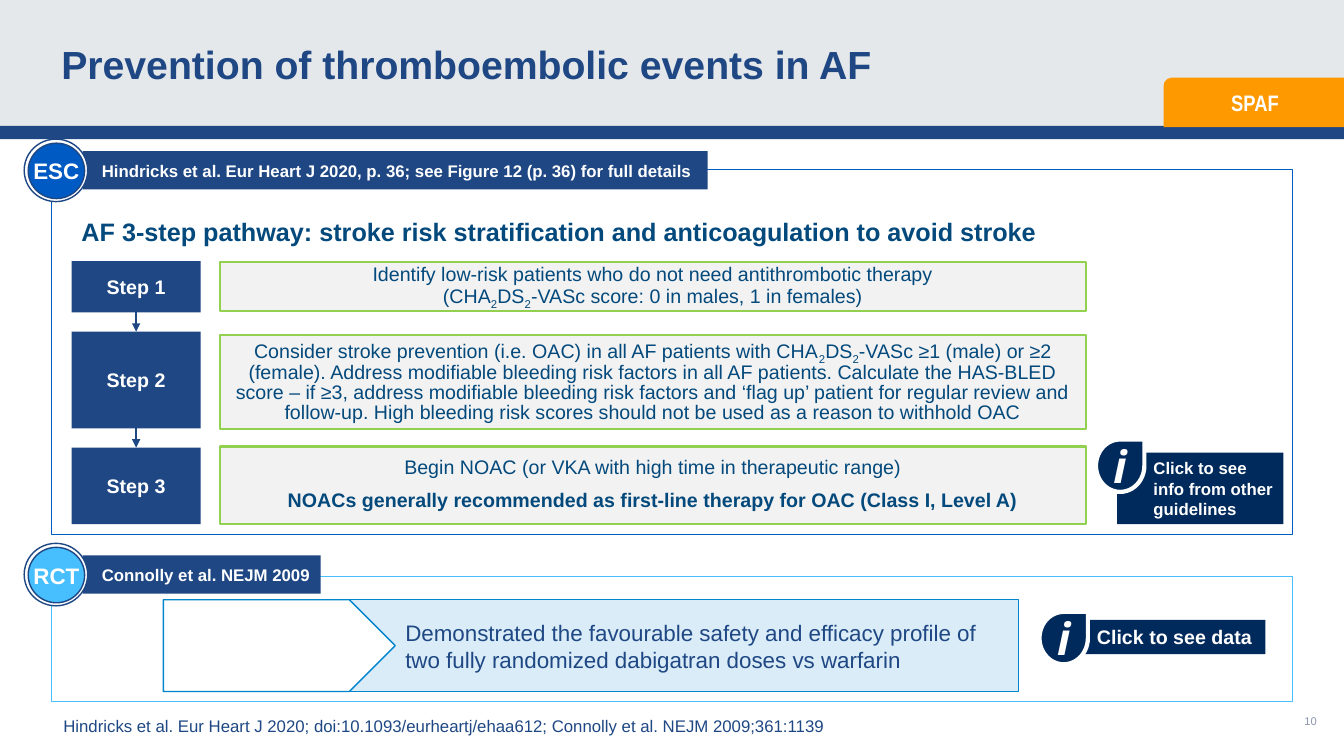
from dataclasses import dataclass

from lxml.etree import SubElement
from pptx import Presentation
from pptx.dml.color import RGBColor
from pptx.enum.shapes import MSO_CONNECTOR, MSO_SHAPE
from pptx.enum.text import MSO_ANCHOR, PP_ALIGN
from pptx.oxml.ns import qn
from pptx.util import Inches, Pt


@dataclass(frozen=True)
class Theme:
    font: str = "Arial"
    narrow: str = "Arial Narrow"
    icon_font: str = "Noto Sans"
    navy: str = "1E4784"
    dark: str = "002A5C"
    teal: str = "03497C"
    blue: str = "005AC4"
    sky: str = "47BFFF"
    cyan: str = "0084CB"
    green: str = "92D050"
    orange: str = "FF9900"
    band: str = "E5E8EA"
    pale: str = "F2F2F2"
    muted: str = "8D95AE"
    white: str = "FFFFFF"
    title: int = 28
    heading: int = 18
    large: int = 16
    body: int = 14
    small: int = 12
    page: int = 8
    icon: int = 32


T = Theme()


def write(sp, text, size, color, bold=False, italic=False, font=T.font, align=PP_ALIGN.LEFT,
          anchor=MSO_ANCHOR.MIDDLE, insets=(0.1, 0.05, 0.1, 0.05), wrap=True, first=True):
    tf = sp.text_frame
    tf.word_wrap = wrap
    tf.vertical_anchor = anchor
    tf.margin_left, tf.margin_top, tf.margin_right, tf.margin_bottom = map(Inches, insets)
    p = tf.paragraphs[0] if first else tf.add_paragraph()
    p.alignment = align
    for n, line in enumerate(text.split("\n")):
        if n:
            p.add_line_break()
        for k, part in enumerate(line.split("|")):
            r = p.add_run()
            r.text = part
            r.font.name, r.font.size = font, Pt(size)
            r.font.bold, r.font.italic = bold, italic
            r.font.color.rgb = RGBColor.from_string(color)
            if k % 2:
                r.font._element.set("baseline", "-25000")
    return p


def shape(s, kind, x, y, w, h, fill=None, line=None, weight=1.0):
    sp = s.shapes.add_shape(kind, Inches(x), Inches(y), Inches(w), Inches(h))
    sp.shadow.inherit = False
    if fill:
        sp.fill.solid()
        sp.fill.fore_color.rgb = RGBColor.from_string(fill)
    else:
        sp.fill.background()
    if line:
        sp.line.color.rgb = RGBColor.from_string(line)
        sp.line.width = Pt(weight)
    else:
        sp.line.fill.background()
    return sp


def label(s, x, y, w, h, text, size, color, **style):
    sp = s.shapes.add_textbox(Inches(x), Inches(y), Inches(w), Inches(h))
    write(sp, text, size, color, **style)


def arrow(s, upper, lower):
    c = s.shapes.add_connector(MSO_CONNECTOR.STRAIGHT, 0, 0, 0, 0)
    c.begin_connect(upper, 2)
    c.end_connect(lower, 0)
    c.line.color.rgb = RGBColor.from_string(T.navy)
    c.line.width = Pt(1.5)
    SubElement(c.line._get_or_add_ln(), qn("a:tailEnd"), type="triangle")
    SubElement(c._element.spPr, qn("a:effectLst"))


def header(s, x, y, w, h):
    shape(s, MSO_SHAPE.RECTANGLE, x, y, w, h, T.band)
    shape(s, MSO_SHAPE.RECTANGLE, x, y + h - 0.01, w, 0.13, T.navy)
    tab = shape(s, MSO_SHAPE.ROUND_1_RECTANGLE, x + w - 1.79, y + h - 0.49,
                1.79, 0.49, T.orange)
    tab._element.spPr.find(qn("a:xfrm")).set("flipH", "1")
    write(tab, "SPAF", T.large, T.white, bold=True, font=T.narrow,
          align=PP_ALIGN.CENTER, insets=(0, 0, 0, 0))
    label(s, x + 0.51, y, 12.31, h, "Prevention of thromboembolic events in AF",
          T.title, T.navy, bold=True)


def source_tag(s, x, y, w, badge, color, citation):
    bar = shape(s, MSO_SHAPE.RECTANGLE, x + 0.58, y + 0.12, w, 0.38, T.navy)
    write(bar, citation, T.small, T.white, bold=True, insets=(0.19, 0.05, 0, 0.05))
    shape(s, MSO_SHAPE.OVAL, x, y, 0.63, 0.62, T.white, T.navy)
    disc = shape(s, MSO_SHAPE.OVAL, x + 0.04, y + 0.04, 0.56, 0.55, color, T.navy)
    write(disc, badge, T.large, T.white, bold=True, align=PP_ALIGN.CENTER,
          insets=(0, 0, 0, 0), wrap=False)


def info_button(s, x, y, dx, dy, w, h, text, size, left):
    sp = shape(s, MSO_SHAPE.RECTANGLE, x + dx, y + dy, w, h, T.dark)
    write(sp, text, size, T.white, bold=True, insets=(left, 0.05, 0.05, 0.05))
    drop = shape(s, MSO_SHAPE.TEAR, x, y, 0.48, 0.52, T.dark, T.white, 3)
    write(drop, "i", T.icon, T.white, bold=True, italic=True, font=T.icon_font,
          align=PP_ALIGN.CENTER, insets=(0, 0, 0, 0), wrap=False)


def step_row(s, x, y, h, name, detail_y, detail_h, lines):
    step = shape(s, MSO_SHAPE.RECTANGLE, x, y, 1.28, h, T.navy)
    write(step, name, T.body, T.white, bold=True, align=PP_ALIGN.CENTER)
    detail = shape(s, MSO_SHAPE.RECTANGLE, x + 1.47, detail_y, 8.59, detail_h,
                   T.pale, T.green, 1.5)
    for n, text in enumerate(lines):
        p = write(detail, text, T.body, T.teal, bold=n > 0, align=PP_ALIGN.CENTER, first=n == 0)
        p.line_spacing = 0.85
        if n:
            p.space_before = Pt(9)
    return step


def pathway(s, x, y, w, h):
    shape(s, MSO_SHAPE.RECTANGLE, x, y, w, h, None, T.blue, 0.75)
    source_tag(s, x - 0.27, y - 0.3, 6.2, "ESC", T.blue,
               "Hindricks et al. Eur Heart J 2020, p. 36; see Figure 12 (p. 36) for full details")
    label(s, x + 0.2, y + 0.39, 10.49, 0.45,
          "AF 3-step pathway: stroke risk stratification and anticoagulation to avoid stroke",
          T.heading, T.teal, bold=True)
    rows = [
        (0.91, 0.51, 0.92, 0.49,
         ["Identify low-risk patients who do not need antithrombotic therapy\n"
          "(CHA|2|DS|2|-VASc score: 0 in males, 1 in females)"]),
        (1.61, 0.96, 1.64, 0.94,
         ["Consider stroke prevention (i.e. OAC) in all AF patients with CHA|2|DS|2|-VASc ≥1 (male) "
          "or ≥2 (female). Address modifiable bleeding risk factors in all AF patients. Calculate "
          "the HAS-BLED score – if ≥3, address modifiable bleeding risk factors and ‘flag up’ "
          "patient for regular review and follow-up. High bleeding risk scores should not be used "
          "as a reason to withhold OAC"]),
        (2.76, 0.76, 2.75, 0.77,
         ["Begin NOAC (or VKA with high time in therapeutic range)",
          "NOACs generally recommended as first-line therapy for OAC (Class I, Level A)"]),
    ]
    steps = [step_row(s, x + 0.2, y + dy, sh, f"Step {n}", y + detail_dy, dh, lines)
             for n, (dy, sh, detail_dy, dh, lines) in enumerate(rows, 1)]
    for upper, lower in zip(steps, steps[1:]):
        arrow(s, upper, lower)
    info_button(s, x + 10.36, y + 2.68, 0.21, 0.13, 1.65, 0.71,
                "Click to see info from other guidelines", T.small, 0.36)


def trial(s, x, y, w, h):
    shape(s, MSO_SHAPE.RECTANGLE, x, y, w, h, None, T.sky, 0.75)
    source_tag(s, x - 0.27, y - 0.33, 2.36, "RCT", T.sky, "Connolly et al. NEJM 2009")
    finding = shape(s, MSO_SHAPE.RECTANGLE, x + 2.82, y + 0.23, 6.77, 0.91, T.cyan, T.cyan)
    color = finding._element.spPr.find(qn("a:solidFill"))[0]
    SubElement(color, qn("a:alpha"), val="15000")
    write(finding, "Demonstrated the favourable safety and efficacy profile of two fully "
          "randomized dabigatran doses vs warfarin", T.large, T.navy,
          insets=(0.69, 0.05, 0.1, 0.05))
    shape(s, MSO_SHAPE.PENTAGON, x + 1.11, y + 0.23, 2.3, 0.91, T.white, T.cyan)
    info_button(s, x + 9.8, y + 0.35, 0.41, 0.08, 1.83, 0.34,
                "Click to see data", T.body, 0.16)


def footer(s, x, y, w, h):
    label(s, x, y, w, h, "Hindricks et al. Eur Heart J 2020; doi:10.1093/eurheartj/ehaa612; "
          "Connolly et al. NEJM 2009;361:1139", T.small, T.navy, anchor=MSO_ANCHOR.BOTTOM)
    label(s, x + w, y - 0.1, 0.66, 0.4, "10", T.page, T.muted, align=PP_ALIGN.CENTER)


def main():
    prs = Presentation()
    prs.slide_width, prs.slide_height = Inches(13.33), Inches(7.5)
    s = prs.slides.add_slide(prs.slide_layouts[6])
    header(s, 0, 0, 13.33, 1.26)
    pathway(s, 0.51, 1.68, 12.31, 3.62)
    trial(s, 0.51, 5.72, 12.31, 1.24)
    footer(s, 0.53, 7.05, 12.14, 0.3)
    prs.save("out.pptx")


if __name__ == "__main__":
    main()
